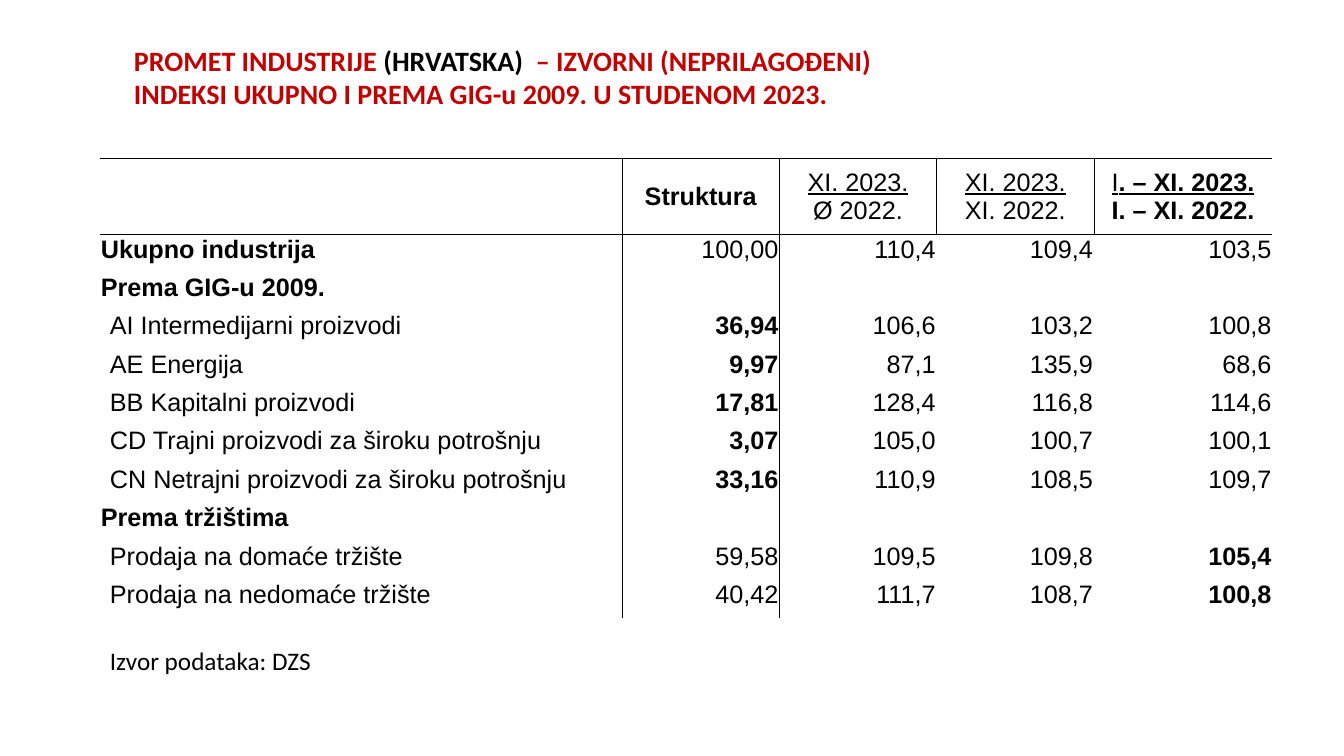
from dataclasses import dataclass
from lxml.etree import SubElement
from pptx import Presentation
from pptx.dml.color import RGBColor
from pptx.enum.text import MSO_ANCHOR as Anchor, MSO_AUTO_SIZE as AutoSize, PP_ALIGN as Align
from pptx.oxml.ns import qn
from pptx.util import Inches, Pt


@dataclass(frozen=True)
class Theme:
    """Colours, fonts and type sizes."""
    ink: str = "000000"
    accent: str = "C00000"
    text_font: str = "Calibri"
    table_font: str = "Arial"
    title_size: int = 20
    body_size: int = 18
    rule_width: float = 0.5


@dataclass(frozen=True)
class Span:
    """A stretch of text with its own style."""
    text: str
    bold: bool = False
    underline: bool = False
    color: str = Theme.ink


THEME = Theme()
SLIDE_WIDTH, SLIDE_HEIGHT = Inches(13.33), Inches(7.5)
TABLE_COLUMNS = (38.86, 11.7, 11.7, 11.7, 13.28)
HEADER_ROW, BODY_ROW = 10.05, 5.08
INSET, INDENT = Inches(0.01), Inches(0.1)

TITLE = [
    Span("PROMET INDUSTRIJE ", True, color=THEME.accent),
    Span("(HRVATSKA)  ", True),
    Span("– IZVORNI (NEPRILAGOĐENI) INDEKSI UKUPNO I PREMA GIG-u 2009. U STUDENOM 2023.",
         True, color=THEME.accent),
]
SOURCE = [Span("Izvor podataka: DZS")]
HEADERS = [
    [],
    [Span("Struktura", True)],
    [Span("XI. 2023.\n", underline=True), Span("Ø 2022.")],
    [Span("XI. 2023.\n", underline=True), Span("XI. 2022.")],
    [Span("I", underline=True), Span(". – XI. 2023.\n", True, True), Span("I. – XI. 2022.", True)],
]
TOTAL, GROUP, PRODUCT, MARKET = "total", "group", "product", "market"
BOLD_COLUMNS = {TOTAL: {0}, GROUP: {0}, PRODUCT: {1}, MARKET: {4}}
ROWS = [
    (TOTAL, "Ukupno industrija", "100,00", "110,4", "109,4", "103,5"),
    (GROUP, "Prema GIG-u 2009.", "", "", "", ""),
    (PRODUCT, "AI Intermedijarni proizvodi", "36,94", "106,6", "103,2", "100,8"),
    (PRODUCT, "AE Energija", "9,97", "87,1", "135,9", "68,6"),
    (PRODUCT, "BB Kapitalni proizvodi", "17,81", "128,4", "116,8", "114,6"),
    (PRODUCT, "CD Trajni proizvodi za široku potrošnju", "3,07", "105,0", "100,7", "100,1"),
    (PRODUCT, "CN Netrajni proizvodi za široku potrošnju", "33,16", "110,9", "108,5", "109,7"),
    (GROUP, "Prema tržištima", "", "", "", ""),
    (MARKET, "Prodaja na domaće tržište", "59,58", "109,5", "109,8", "105,4"),
    (MARKET, "Prodaja na nedomaće tržište", "40,42", "111,7", "108,7", "100,8"),
]


def across(percent):
    """Turn a percentage of the slide's width into a length."""
    return round(SLIDE_WIDTH * percent / 100)


def down(percent):
    """Turn a percentage of the slide's height into a length."""
    return round(SLIDE_HEIGHT * percent / 100)


def write_spans(para, spans, font_name, size):
    """Fill a paragraph with styled spans, breaking lines where they end."""
    para.font.name, para.font.size = font_name, Pt(size)
    for span in spans:
        run = para.add_run()
        run.text = span.text.rstrip("\n")
        run.font.name, run.font.size = font_name, Pt(size)
        run.font.bold, run.font.underline = span.bold, span.underline
        run.font.color.rgb = RGBColor.from_string(span.color)
        if span.text.endswith("\n"):
            para.add_line_break()


def add_text(page, left, top, width, height, spans, size):
    """Add a wrapping text box."""
    box = page.shapes.add_textbox(across(left), down(top), across(width), down(height))
    frame = box.text_frame
    frame.word_wrap = True
    frame.auto_size = AutoSize.SHAPE_TO_FIT_TEXT
    write_spans(frame.paragraphs[0], spans, THEME.text_font, size)


def set_borders(cell, ruled):
    """Rule the named sides of a cell and clear the others."""
    properties = cell._tc.get_or_add_tcPr()
    for side in "LRTB":
        line = SubElement(properties, qn(f"a:ln{side}"), w=str(Pt(THEME.rule_width)))
        if side in ruled:
            fill = SubElement(line, qn("a:solidFill"))
            SubElement(fill, qn("a:srgbClr"), val=THEME.ink)
        else:
            SubElement(line, qn("a:noFill"))


def ruled_sides(row, column):
    """Return the sides of a table cell that carry a rule."""
    last = len(TABLE_COLUMNS) - 1
    upright_after = last if row == 0 else 2
    sides = "TB" if row == 0 else "T" if row == 1 else ""
    if 0 < column <= upright_after:
        sides += "L"
    if column < upright_after:
        sides += "R"
    return sides


def fill_cell(cell, spans, align, anchor, sides, indent=INSET):
    """Style one table cell and write its text."""
    cell.margin_left, cell.margin_right = indent, INSET
    cell.margin_top, cell.margin_bottom = INSET, 0
    cell.vertical_anchor = anchor
    set_borders(cell, sides)
    cell.fill.background()
    para = cell.text_frame.paragraphs[0]
    para.alignment = align
    write_spans(para, spans, THEME.table_font, THEME.body_size)


def add_index_table(page, left, top):
    """Add the table of turnover indices."""
    height = HEADER_ROW + BODY_ROW * len(ROWS)
    table = page.shapes.add_table(len(ROWS) + 1, len(TABLE_COLUMNS), across(left), down(top),
                                  across(sum(TABLE_COLUMNS)), down(height)).table
    table.first_row = table.horz_banding = False
    for column, width in zip(table.columns, TABLE_COLUMNS):
        column.width = across(width)
    for index, row in enumerate(table.rows):
        row.height = down(BODY_ROW if index else HEADER_ROW)
    for column, spans in enumerate(HEADERS):
        fill_cell(table.cell(0, column), spans, Align.CENTER, Anchor.MIDDLE, ruled_sides(0, column))
    for row, (kind, *texts) in enumerate(ROWS, start=1):
        for column, text in enumerate(texts):
            spans = [Span(text, column in BOLD_COLUMNS[kind])] if text else []
            indented = column == 0 and kind in (PRODUCT, MARKET)
            fill_cell(table.cell(row, column), spans, Align.RIGHT if column else Align.LEFT,
                      Anchor.TOP, ruled_sides(row, column), INDENT if indented else INSET)


def main():
    """Build the slide and save it."""
    deck = Presentation()
    deck.slide_width, deck.slide_height = SLIDE_WIDTH, SLIDE_HEIGHT
    page = deck.slides.add_slide(deck.slide_layouts[6])
    add_text(page, 9.23, 5.07, 57.84, 10.27, TITLE, THEME.title_size)
    add_text(page, 7.43, 84.67, 50.04, 5.33, SOURCE, THEME.body_size)
    add_index_table(page, 7.43, 20.93)
    deck.save("out.pptx")


if __name__ == "__main__":
    main()
